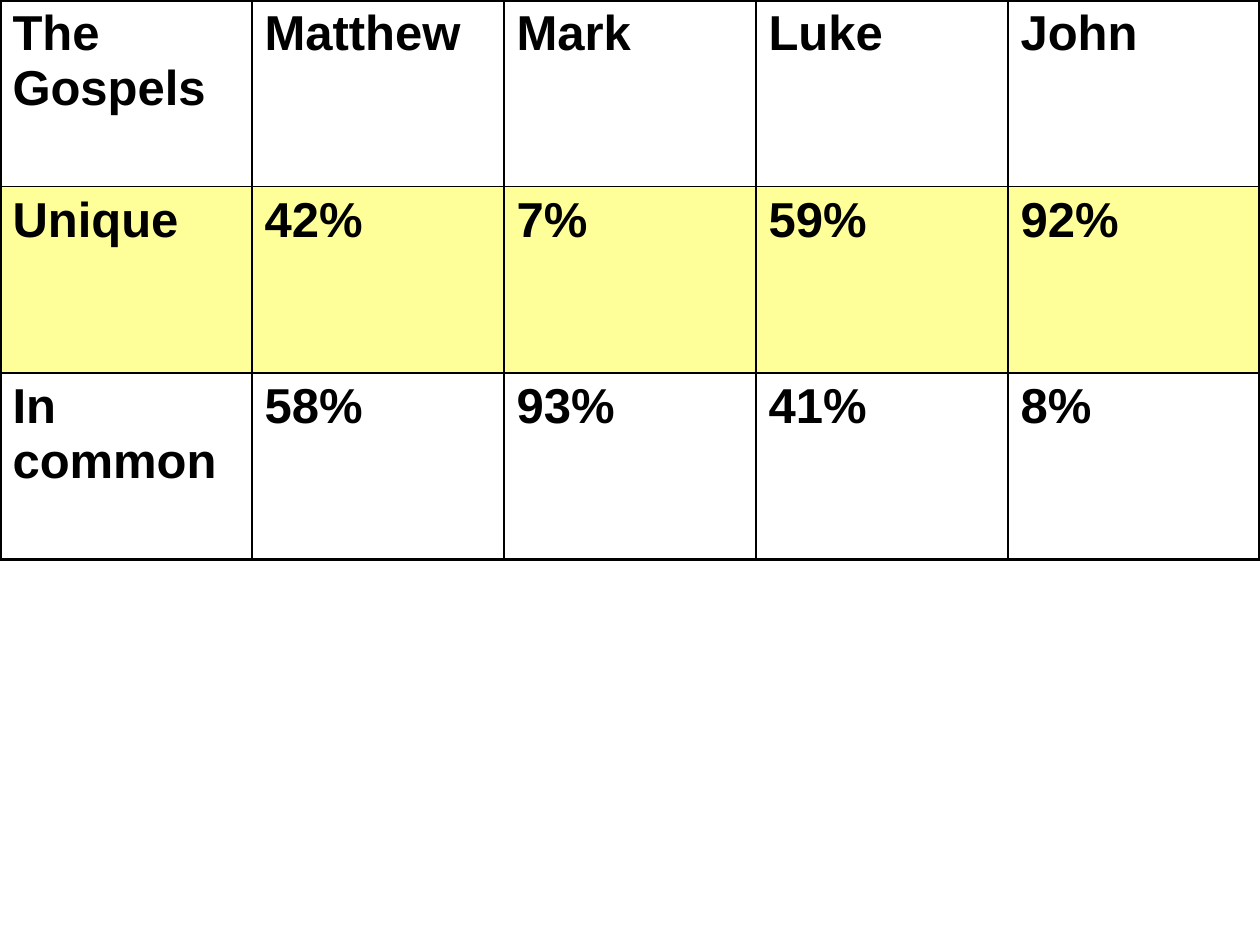
"""Build a slide with a table of unique and common content in the Gospels."""
from lxml import etree
from pptx import Presentation
from pptx.dml.color import RGBColor
from pptx.oxml.ns import qn
from pptx.util import Pt

PX = 9144
WIDE, TALL = 1000, 750
COL, ROW = 200, 148
THIN, THICK = 1, 2.25
BLANK = 6
HUES = {"ink": "000000", "plain": "FFFFFF", "mark": "FFFF99"}
DATA = [
    ["The Gospels", "Matthew", "Mark", "Luke", "John"],
    ["Unique", "42%", "7%", "59%", "92%"],
    ["In common", "58%", "93%", "41%", "8%"],
]


def write(frame, text, size=28, bold=True, font="Arial", hue="ink"):
    para = frame.paragraphs[0]
    para.space_before = Pt(0)
    run = para.add_run()
    run.text = text
    run.font.name = font
    run.font.size = Pt(size)
    run.font.bold = bold
    run.font.color.rgb = RGBColor.from_string(HUES[hue])


def edge(cell, side, width):
    props = cell._tc.get_or_add_tcPr()
    line = etree.SubElement(props, qn(f"a:ln{side}"), w=str(Pt(width)))
    fill = etree.SubElement(line, qn("a:solidFill"))
    etree.SubElement(fill, qn("a:srgbClr"), val=HUES["ink"])


deck = Presentation()
deck.slide_width, deck.slide_height = WIDE * PX, TALL * PX
slide = deck.slides.add_slide(deck.slide_layouts[BLANK])

rows, cols = len(DATA), len(DATA[0])
grid = slide.shapes.add_table(rows, cols, 0, 0, cols * COL * PX, rows * ROW * PX).table
grid.first_row = False
grid.horz_banding = False
for col in grid.columns:
    col.width = COL * PX
for row in grid.rows:
    row.height = ROW * PX

for r, line in enumerate(DATA):
    for c, text in enumerate(line):
        cell = grid.cell(r, c)
        write(cell.text_frame, text)
        outer = {"L": c == 0, "R": c == cols - 1, "T": r == 0, "B": r == rows - 1}
        for side, rim in outer.items():
            edge(cell, side, THICK if rim else THIN)
        cell.fill.solid()
        cell.fill.fore_color.rgb = RGBColor.from_string(HUES["mark" if r == 1 else "plain"])

deck.save("out.pptx")
